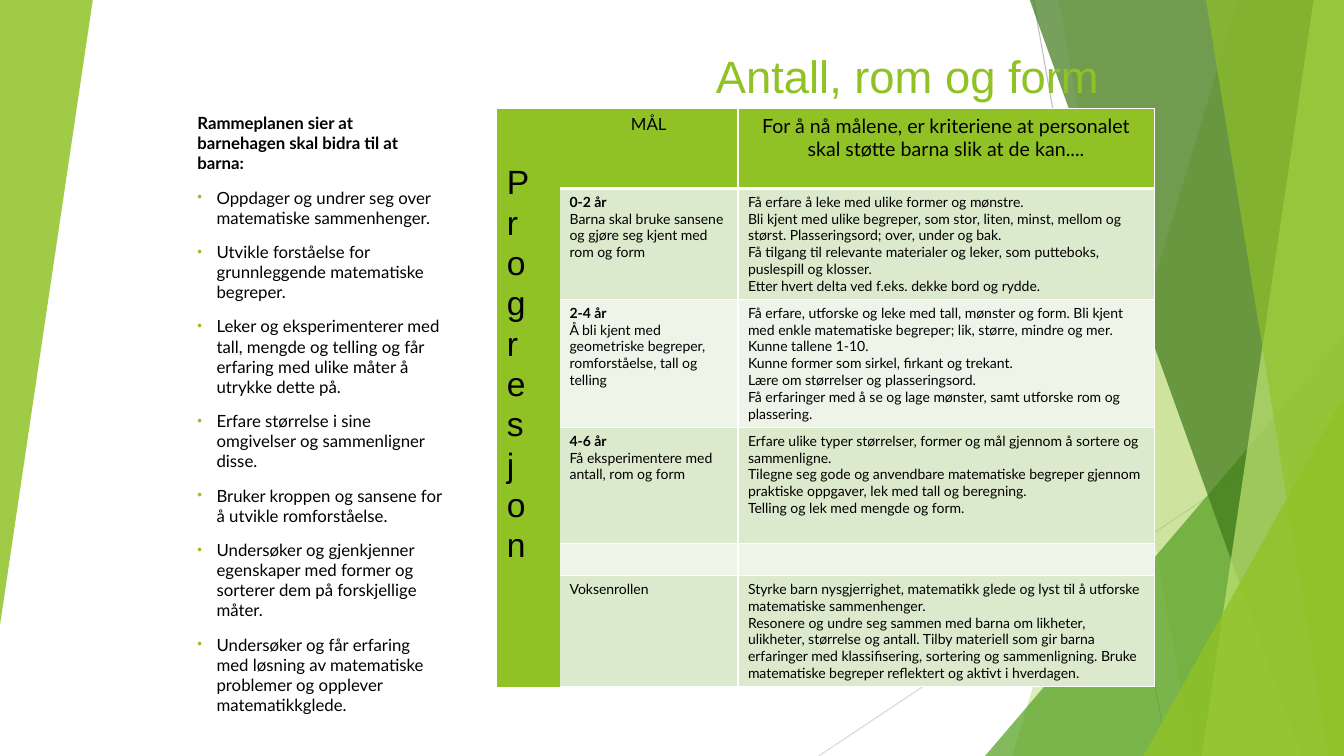
from dataclasses import dataclass

from lxml.etree import SubElement
from pptx import Presentation
from pptx.dml.color import RGBColor
from pptx.enum.shapes import MSO_CONNECTOR, MSO_SHAPE
from pptx.enum.text import MSO_ANCHOR, MSO_AUTO_SIZE, PP_ALIGN
from pptx.oxml.ns import qn
from pptx.util import Pt

EMU_PER_PX = 9144  # 100 px to the inch


def px(n):
    return n * EMU_PER_PX


@dataclass(frozen=True)
class Theme:
    lime: str = "90C226"
    leaf: str = "54A021"
    forest: str = "3F7819"
    pale: str = "C0E474"
    band_dark: str = "DBE9CD"
    band_light: str = "EEF4E8"
    white: str = "FFFFFF"
    black: str = "000000"
    line_dark: str = "BFBFBF"
    line_light: str = "D9D9D9"
    heading: str = "Arial"
    body: str = "Lato"
    title_size: float = 32.4
    progress_size: int = 24
    header_size: int = 14
    body_size: int = 12
    cell_size: int = 10


class SlideBuilder:
    def __init__(self, slide, theme):
        self.s = slide
        self.t = theme

    def line(self, x1, y1, x2, y2, color):
        c = self.s.shapes.add_connector(MSO_CONNECTOR.STRAIGHT, px(x1), px(y1), px(x2), px(y2))
        c.line.color.rgb = RGBColor.from_string(color)
        c.line.width = Pt(0.75)
        SubElement(c._element.spPr, qn("a:effectLst"))

    def paint(self, sp, color, opacity):
        sp.shadow.inherit = False
        sp.line.fill.background()
        sp.fill.solid()
        sp.fill.fore_color.rgb = RGBColor.from_string(color)
        clr = sp._element.spPr.find(qn("a:solidFill"))[0]
        SubElement(clr, qn("a:alpha"), val=str(opacity * 1000))

    def facet(self, top_x, bottom_x, color, opacity):
        """Four-sided panel that reaches the right edge of the slide."""
        fb = self.s.shapes.build_freeform(top_x, -1, scale=EMU_PER_PX)
        fb.add_line_segments([(1333, -1), (1333, 750), (bottom_x, 750)], close=True)
        self.paint(fb.convert_to_shape(), color, opacity)

    def triangle(self, x, y, w, h, color, opacity, rotation=0):
        sp = self.s.shapes.add_shape(MSO_SHAPE.ISOSCELES_TRIANGLE, px(x), px(y), px(w), px(h))
        sp.adjustments[0] = 1
        sp.rotation = rotation
        self.paint(sp, color, opacity)

    def run(self, p, text, size, font, color=None, bold=False):
        r = p.add_run()
        r.text = text
        r.font.size = Pt(size)
        r.font.name = font
        r.font.bold = bold
        r.font.color.rgb = RGBColor.from_string(color or self.t.black)

    def paragraphs(self, tf, count):
        return [tf.paragraphs[0]] + [tf.add_paragraph() for _ in range(count - 1)]

    def text_box(self, x, y, w, h):
        tf = self.s.shapes.add_textbox(px(x), px(y), px(w), px(h)).text_frame
        tf.word_wrap = True
        return tf

    def bullet(self, p):
        pPr = p._p.get_or_add_pPr()
        pPr.set("marL", str(px(19)))
        pPr.set("indent", str(px(-19)))
        clr = SubElement(pPr, qn("a:buClr"))
        SubElement(clr, qn("a:srgbClr"), val=self.t.lime)
        SubElement(pPr, qn("a:buSzPct"), val="80000")
        SubElement(pPr, qn("a:buFont"), typeface="Arial")
        SubElement(pPr, qn("a:buChar"), char="•")

    def table(self, x, y, cols, rows):
        shape = self.s.shapes.add_table(len(rows), len(cols), px(x), px(y), px(sum(cols)), px(sum(rows)))
        tbl = shape.table
        tbl.first_row = tbl.horz_banding = False
        for col, w in zip(tbl.columns, cols):
            col.width = px(w)
        for row, h in zip(tbl.rows, rows):
            row.height = px(h)
        return tbl

    def cell(self, cell, fill, borders):
        """Borders maps the sides L, R, T, B to widths in points."""
        tcPr = cell._tc.get_or_add_tcPr()
        for side in "LRTB":
            ln = SubElement(tcPr, qn(f"a:ln{side}"), w=str(Pt(borders.get(side, 0))))
            if side in borders:
                solid = SubElement(ln, qn("a:solidFill"))
                SubElement(solid, qn("a:srgbClr"), val=self.t.white)
            else:
                SubElement(ln, qn("a:noFill"))
        cell.fill.solid()
        cell.fill.fore_color.rgb = RGBColor.from_string(fill)

    def cell_text(self, cell, lines, size, align=PP_ALIGN.LEFT, bold_first=False):
        for i, (p, text) in enumerate(zip(self.paragraphs(cell.text_frame, len(lines) or 1), lines or [""])):
            p.alignment = align
            if text:
                self.run(p, text, size, self.t.body, bold=bold_first and i == 0)
            else:
                SubElement(p._p, qn("a:endParaRPr"), sz=str(size * 100))


INTRO = "Rammeplanen sier at barnehagen skal bidra til at barna:"
AIMS = [
    "Oppdager og undrer seg over matematiske sammenhenger.",
    "Utvikle forståelse for grunnleggende matematiske begreper.",
    "Leker og eksperimenterer med tall, mengde og telling og får erfaring med ulike måter å utrykke dette på.",
    "Erfare størrelse i sine omgivelser og sammenligner disse.",
    "Bruker kroppen og sansene for å utvikle romforståelse.",
    "Undersøker og gjenkjenner egenskaper med former og sorterer dem på forskjellige måter.",
    "Undersøker og får erfaring med løsning av matematiske problemer og opplever matematikkglede.",
]
HEADERS = ["MÅL", "For å nå målene, er kriteriene at personalet skal støtte barna slik at de kan...."]
# Each row: height, goal lines, criteria lines
ROWS = [
    (110, ["0-2 år", "Barna skal bruke sansene og gjøre seg kjent med rom og form"],
     ["Få erfare å leke med ulike former og mønstre.",
      "Bli kjent med ulike begreper, som stor, liten, minst, mellom og størst. Plasseringsord; over, under og bak.",
      "Få tilgang til relevante materialer og leker, som putteboks, puslespill og klosser.",
      "Etter hvert delta ved f.eks. dekke bord og rydde."]),
    (127, ["2-4 år", "Å bli kjent med geometriske begreper, romforståelse, tall og telling"],
     ["Få erfare, utforske og leke med tall, mønster og form. Bli kjent med enkle matematiske begreper; "
      "lik, større, mindre og mer.",
      "Kunne tallene 1-10.",
      "Kunne former som sirkel, firkant og trekant.",
      "Lære om størrelser og plasseringsord.",
      "Få erfaringer med å se og lage mønster, samt utforske rom og plassering."]),
    (115, ["4-6 år", "Få eksperimentere med antall, rom og form"],
     ["Erfare ulike typer størrelser, former og mål gjennom å sortere og sammenligne.",
      "Tilegne seg gode og anvendbare matematiske begreper gjennom praktiske oppgaver, "
      "lek med tall og beregning.",
      "Telling og lek med mengde og form."]),
    (32, [], []),
    (110, ["Voksenrollen"],
     ["Styrke barn nysgjerrighet, matematikk glede og lyst til å utforske matematiske sammenhenger.",
      "Resonere og undre seg sammen med barna om likheter, ulikheter, størrelse og antall. "
      "Tilby materiell som gir barna erfaringer med klassifisering, sortering og sammenligning. "
      "Bruke matematiske begreper reflektert og aktivt i hverdagen."]),
]


def main():
    prs = Presentation()
    prs.slide_width, prs.slide_height = px(1333), px(750)
    t = Theme()
    b = SlideBuilder(prs.slides.add_slide(prs.slide_layouts[6]), t)

    # Background facets
    b.line(1025, 0, 1158, 750, t.line_dark)
    b.line(1333, 403, 812, 750, t.line_light)
    b.facet(1228, 1004, t.lime, 30)
    b.facet(1050, 1183, t.lime, 20)
    b.triangle(977, 333, 356, 417, t.leaf, 72)
    b.facet(1021, 1291, t.forest, 70)
    b.facet(1303, 1192, t.pale, 70)
    b.facet(1196, 1318, t.lime, 65)
    b.triangle(1134, 393, 199, 357, t.lime, 80)
    b.triangle(0, 0, 92, 620, t.lime, 85, rotation=180)

    # Title
    tf = b.text_box(257, 52, 843, 55)
    tf.vertical_anchor = MSO_ANCHOR.BOTTOM
    tf.paragraphs[0].alignment = PP_ALIGN.RIGHT
    b.run(tf.paragraphs[0], "Antall, rom og form", t.title_size, t.heading, t.lime)

    # Aims list
    tf = b.text_box(186, 107, 263, 615)
    for i, (p, text) in enumerate(zip(b.paragraphs(tf, len(AIMS) + 1), [INTRO] + AIMS)):
        p.space_before = Pt(10)
        if i:
            b.bullet(p)
        b.run(p, text, t.body_size, t.body, bold=i == 0)

    # Goals table
    tbl = b.table(493, 108, [62, 177, 413], [79] + [row[0] for row in ROWS])
    for r in range(len(ROWS) + 1):
        band = t.band_dark if r % 2 else t.band_light
        fill = band if r else t.lime
        edges = {"R": 1, "T": 1, "B": 1 if r else 3}
        b.cell(tbl.cell(r, 0), t.lime, {})
        b.cell(tbl.cell(r, 1), fill, edges)
        b.cell(tbl.cell(r, 2), fill, {"L": 1, **edges})
    tbl.cell(0, 0).merge(tbl.cell(len(ROWS), 0))
    for c, (text, size) in enumerate(zip(HEADERS, (t.body_size, t.header_size)), 1):
        b.cell_text(tbl.cell(0, c), [text], size, PP_ALIGN.CENTER)
    for r, (_, goal, criteria) in enumerate(ROWS, 1):
        b.cell_text(tbl.cell(r, 1), goal, t.cell_size, bold_first=len(goal) > 1)
        b.cell_text(tbl.cell(r, 2), criteria, t.cell_size)

    # Progression label, one letter per line
    tf = b.text_box(493, 155, 39, 414)
    tf.auto_size = MSO_AUTO_SIZE.SHAPE_TO_FIT_TEXT
    for p, text in zip(b.paragraphs(tf, 2), ("Progres", "jon")):
        b.run(p, text, t.progress_size, t.heading)

    prs.save("out.pptx")


if __name__ == "__main__":
    main()
